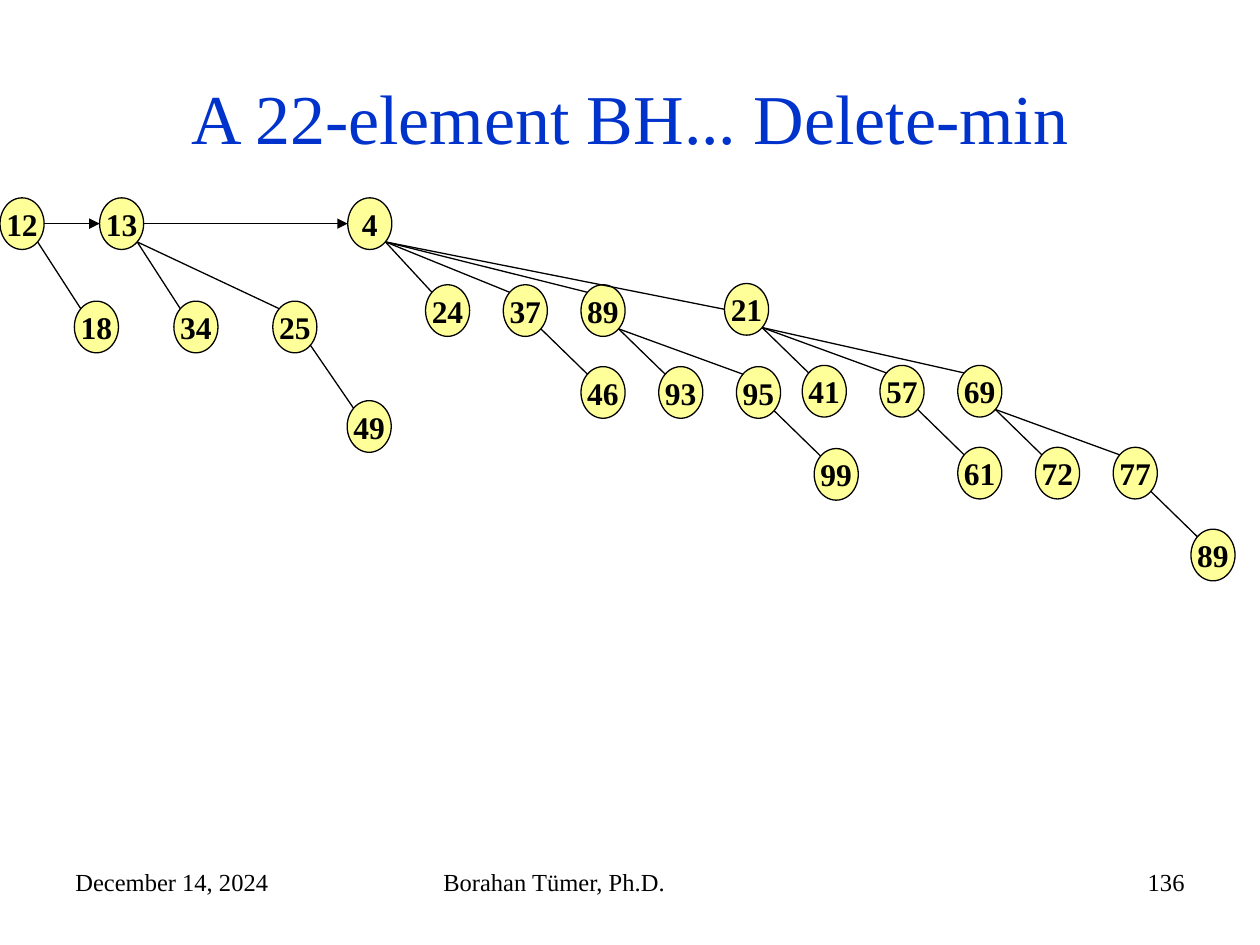
from dataclasses import dataclass

from lxml import etree
from pptx import Presentation
from pptx.dml.color import RGBColor
from pptx.enum.shapes import MSO_CONNECTOR, MSO_SHAPE
from pptx.enum.text import MSO_ANCHOR, PP_ALIGN
from pptx.oxml.ns import qn
from pptx.util import Inches, Pt

STRAIGHT = MSO_CONNECTOR.STRAIGHT
OVAL = MSO_SHAPE.OVAL
TOP, MIDDLE = MSO_ANCHOR.TOP, MSO_ANCHOR.MIDDLE
LEFT, CENTER, RIGHT = PP_ALIGN.LEFT, PP_ALIGN.CENTER, PP_ALIGN.RIGHT

CELL = Inches(0.1)
GRID_COLUMNS, GRID_ROWS = 100, 75
NODE_WIDTH, NODE_HEIGHT = 3.5, 4.1
CORNER = 0.5 ** 0.5 / 2


@dataclass(frozen=True)
class Theme:
    font: str = "Times New Roman"
    title_color: RGBColor = RGBColor(0x00, 0x33, 0xCC)
    ink: RGBColor = RGBColor(0x00, 0x00, 0x00)
    node_fill: RGBColor = RGBColor(0xFF, 0xFF, 0x99)
    title_size: int = 40
    node_size: int = 18
    footer_size: int = 14
    line_width: float = 0.75


@dataclass(frozen=True)
class Spacing:
    first_child: float
    sibling: float
    first_level: float
    level: float


THEME = Theme()
SMALL_TREE = Spacing(5.9, 7.85, 8.2, 7.9)
LARGE_TREE = Spacing(6.17, 6.17, 6.9, 6.5)
SUBTREE = Spacing(6.17, 6.17, 6.5, 6.5)

TREE_12 = ("12", [("18", [])])
TREE_13 = ("13", [("34", []), ("25", [("49", [])])])
TREE_4 = ("4", [
    ("24", []),
    ("37", [("46", [])]),
    ("89", [("93", []), ("95", [("99", [])])]),
])
TREE_21 = ("21", [
    ("41", []),
    ("57", [("61", [])]),
    ("69", [("72", []), ("77", [("89", [])])]),
])


def cells(*lengths):
    return [round(length * CELL) for length in lengths]


def set_text(text_frame, text, size, color, alignment, anchor, bold=False):
    text_frame.text = text
    text_frame.vertical_anchor = anchor
    paragraph = text_frame.paragraphs[0]
    paragraph.alignment = alignment
    font = paragraph.runs[0].font
    font.name, font.size, font.bold = THEME.font, Pt(size), bold
    font.color.rgb = color


def add_label(slide, box, text, size, color, alignment, anchor):
    text_frame = slide.shapes.add_textbox(*cells(*box)).text_frame
    text_frame.word_wrap = True
    set_text(text_frame, text, size, color, alignment, anchor)


def add_line(slide, start, end, arrow=False):
    connector = slide.shapes.add_connector(STRAIGHT, *cells(*start, *end))
    connector.line.color.rgb = THEME.ink
    connector.line.width = Pt(THEME.line_width)
    if arrow:
        outline = connector.line._get_or_add_ln()
        etree.SubElement(outline, qn("a:tailEnd"), type="triangle")
    etree.SubElement(connector._element.spPr, qn("a:effectLst"))


def node_point(position, across, down):
    left, top = position
    return left + NODE_WIDTH * (0.5 + across), top + NODE_HEIGHT * (0.5 + down)


def lower_right(position):
    return node_point(position, CORNER, CORNER)


def upper_left(position):
    return node_point(position, -CORNER, -CORNER)


def left_side(position):
    return node_point(position, -0.5, 0)


def right_side(position):
    return node_point(position, 0.5, 0)


def add_node(slide, position, key):
    node = slide.shapes.add_shape(OVAL, *cells(*position, NODE_WIDTH, NODE_HEIGHT))
    node.shadow.inherit = False
    node.fill.solid()
    node.fill.fore_color.rgb = THEME.node_fill
    node.line.color.rgb = THEME.ink
    node.line.width = Pt(THEME.line_width)
    text_frame = node.text_frame
    text_frame.margin_left = text_frame.margin_right = 0
    text_frame.word_wrap = False
    set_text(text_frame, key, THEME.node_size, THEME.ink, CENTER, MIDDLE, bold=True)


def add_tree(slide, position, tree, spacing, depth=0):
    key, children = tree
    left, top = position
    drop = spacing.level if depth else spacing.first_level
    for index, child in enumerate(children):
        offset = spacing.first_child + index * spacing.sibling
        child_position = left + offset, top + drop
        add_line(slide, lower_right(position), upper_left(child_position))
        add_tree(slide, child_position, child, spacing, depth + 1)
    add_node(slide, position, key)


def add_heap(slide, box):
    left, top = box
    root_12, root_13, root_4 = [(left + column, top) for column in (0, 7.9, 27.6)]
    root_21 = left + 57.5, top + 6.8
    add_tree(slide, root_12, TREE_12, SMALL_TREE)
    add_tree(slide, root_13, TREE_13, SMALL_TREE)
    add_tree(slide, root_4, TREE_4, LARGE_TREE)
    add_tree(slide, root_21, TREE_21, SUBTREE)
    add_line(slide, lower_right(root_4), left_side(root_21))
    for source, target in ((root_12, root_13), (root_13, root_4)):
        add_line(slide, right_side(source), left_side(target), arrow=True)


def add_title(slide, box):
    add_label(slide, box, "A 22-element BH... Delete-min",
              THEME.title_size, THEME.title_color, CENTER, MIDDLE)


def add_footer(slide, box):
    left, top, width, height = box
    parts = (
        (0, 23.3, "December 14, 2024", LEFT),
        (29.2, 31.7, "Borahan Tümer, Ph.D.", LEFT),
        (width - 23.3, 23.3, "136", RIGHT),
    )
    for offset, part_width, text, alignment in parts:
        add_label(slide, (left + offset, top, part_width, height), text,
                  THEME.footer_size, THEME.ink, alignment, TOP)


def main():
    presentation = Presentation()
    presentation.slide_width, presentation.slide_height = cells(GRID_COLUMNS, GRID_ROWS)
    slide = presentation.slides.add_slide(presentation.slide_layouts[6])
    add_title(slide, (5, 3, 90, 12.5))
    add_heap(slide, (0, 15.7))
    add_footer(slide, (5, 68.3, 90, 5.2))
    presentation.save("out.pptx")


if __name__ == "__main__":
    main()
